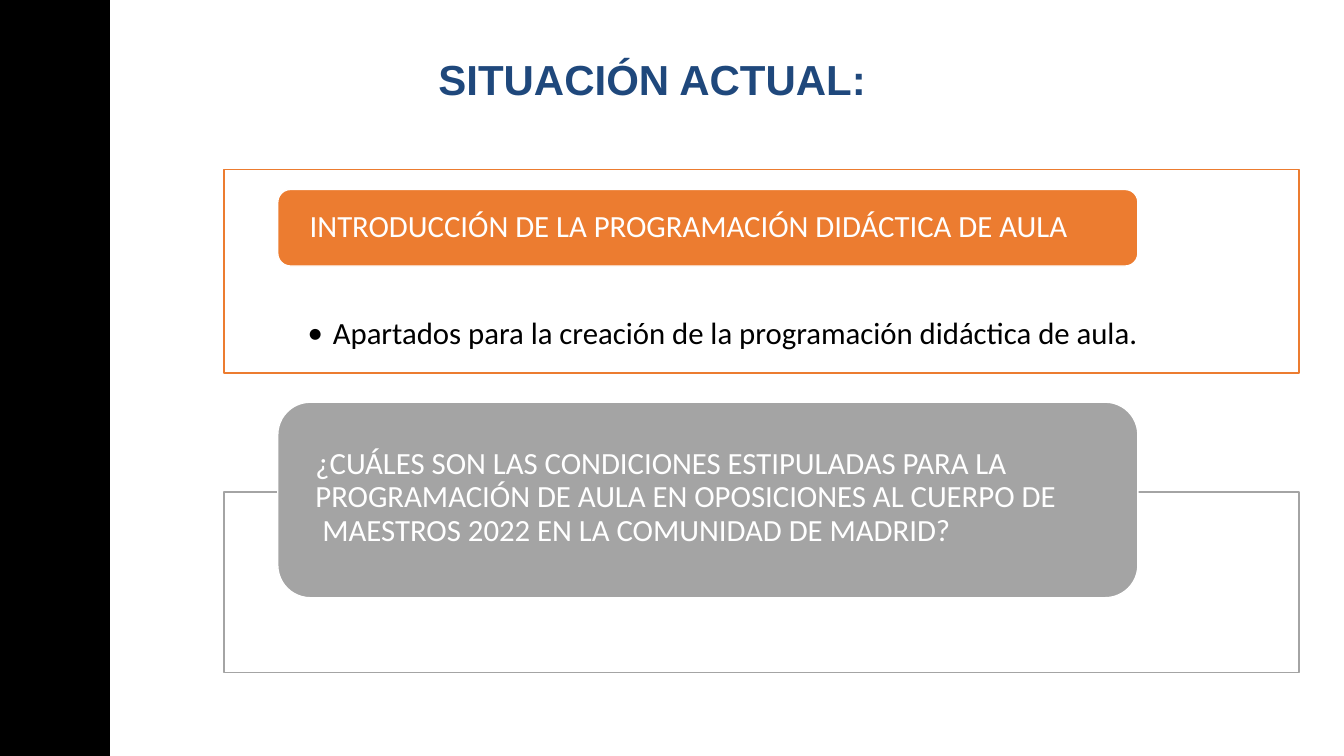
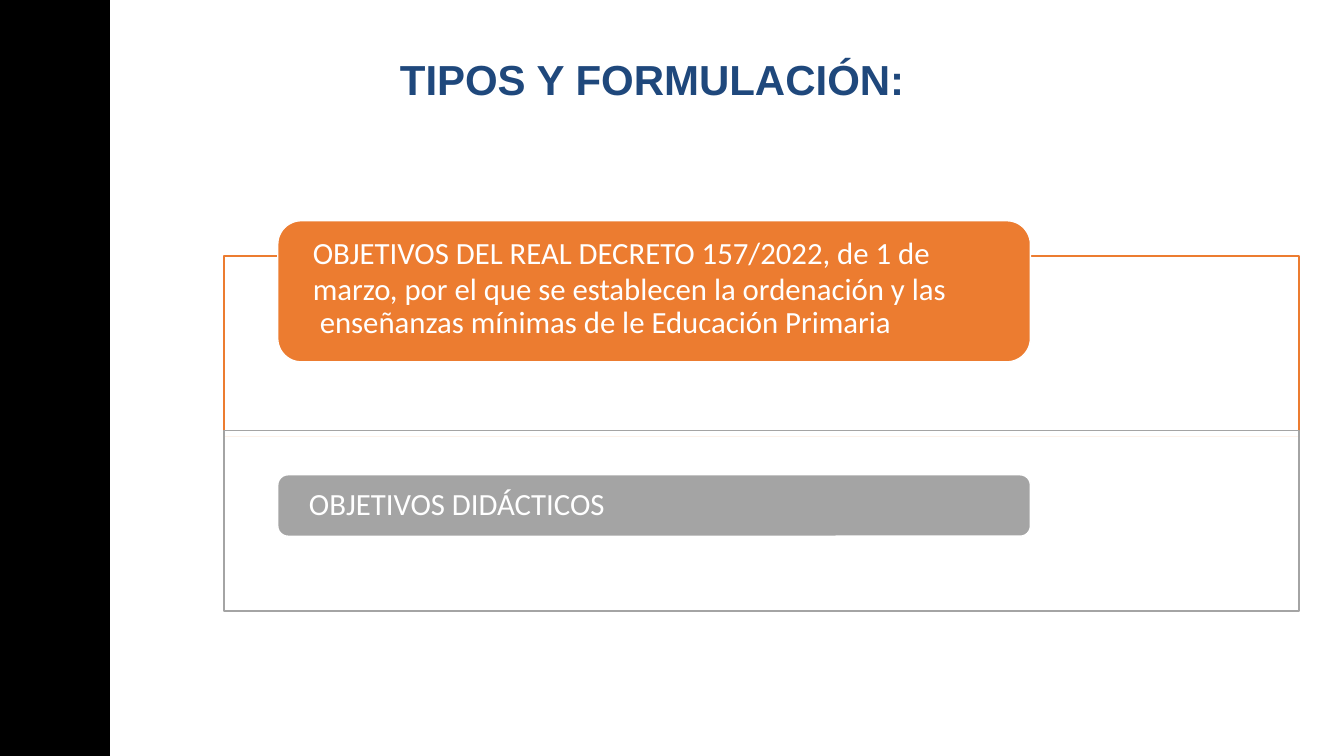
from lxml import etree
from pptx import Presentation
from pptx.dml.color import RGBColor
from pptx.enum import shapes, text
from pptx.oxml.ns import qn
from pptx.util import Inches, Pt

WIDE, HIGH = 13.33, 7.5
INK = {"band": "000000", "title": "1F487C", "orange": "EC7C30",
       "gray": "A4A4A4", "white": "FFFFFF", "text": "000000"}
LEFT, SPAN = WIDE / 6, WIDE * 0.8  # column shared by all frames


def paint(shape, fill=None, line=None, alpha=None):
    shape.shadow.inherit = False
    if fill:
        shape.fill.solid()
        shape.fill.fore_color.rgb = RGBColor.from_string(INK[fill])
        if alpha:
            tone = next(shape.element.spPr.iter(qn("a:srgbClr")))
            etree.SubElement(tone, qn("a:alpha")).set("val", str(alpha * 1000))
    else:
        shape.fill.background()
    if line:
        shape.line.color.rgb = RGBColor.from_string(INK[line])
        shape.line.width = Pt(1)
    else:
        shape.line.fill.background()


def write(shape, words, size=22, font="Calibri", color="white", bold=False,
          align="LEFT", pad=(0, 0, 0, 0), lead=None, gap=0, bullet=None):
    """Fill a shape with text; pad is left, top, right, bottom in inches."""
    frame = shape.text_frame
    frame.word_wrap = True
    frame.auto_size = text.MSO_AUTO_SIZE.NONE
    frame.vertical_anchor = text.MSO_ANCHOR.MIDDLE
    (frame.margin_left, frame.margin_top,
     frame.margin_right, frame.margin_bottom) = map(Inches, pad)
    frame.text = words
    for i, para in enumerate(frame.paragraphs):
        para.alignment = getattr(text.PP_ALIGN, align)
        para.space_before = Pt(gap if i else 0)
        if lead:
            para.line_spacing = Pt(lead)
        if bullet:
            props = next(shape.element.iter(qn("a:pPr")))
            props.set("marL", str(Inches(0.25)))
            props.set("indent", str(-Inches(0.25)))
            etree.SubElement(props, qn("a:buFont")).set("typeface", font)
            etree.SubElement(props, qn("a:buChar")).set("char", bullet)
        for run in para.runs:
            run.font.name, run.font.size, run.font.bold = font, Pt(size), bold
            run.font.color.rgb = RGBColor.from_string(INK[color])


def block(slide, kind, x, y, w, h):
    return slide.shapes.add_shape(getattr(shapes.MSO_SHAPE, kind),
                                  *map(Inches, (x, y, w, h)))


def panel(slide, top, high, tone, label, rise, tall, share,
          note=None, alpha=None):
    """Draw a frame and its label pill, set `rise` below the frame's top."""
    frame = block(slide, "RECTANGLE", LEFT, top, SPAN, high)
    paint(frame, fill="white" if alpha else None, line=tone, alpha=alpha)
    pill = block(slide, "ROUNDED_RECTANGLE", LEFT + SPAN * 0.05, top + rise,
                 SPAN * share, tall)
    paint(pill, fill=tone, line="white")
    many = "\v" in label or "\n" in label
    write(pill, label, pad=(0.28, 0, 0, 0.05),
          lead=23.8 if many else None, gap=1.6)
    if note:
        tail = slide.shapes.add_textbox(*map(Inches, (
            LEFT + 0.83, top + high - 0.6, SPAN * 0.85, 0.4)))
        write(tail, note, color="text", bullet="•")


def page(deck, title, panels):
    slide = deck.slides.add_slide(deck.slide_layouts[5])
    head = slide.shapes.title
    head.left, head.top, head.width, head.height = map(
        Inches, (3.47, 0.52, 6, 0.53))
    write(head, title, size=30, font="Arial", color="title", bold=True,
          align="CENTER")
    for part in panels:
        panel(slide, **part)
    return slide


def band(deck, slide):
    """Put the side band on the shared layout, behind everything."""
    bar = block(slide, "RECTANGLE", 0, 0, 1.08, HIGH)
    paint(bar, fill="band", line="band")
    bar.element.nvSpPr.cNvPr.id = 99
    layout = deck.slide_layouts[5]
    for spare in list(layout.placeholders)[1:]:
        layout.shapes.element.remove(spare.element)
    layout.shapes.element.insert(2, bar.element)


def main():
    deck = Presentation()
    deck.slide_width, deck.slide_height = Inches(WIDE), Inches(HIGH)
    first = page(deck, "SITUACIÓN ACTUAL:", [
        dict(top=1.68, high=2.02, tone="orange", rise=0.2, tall=0.76, share=0.8,
             label="INTRODUCCIÓN DE LA PROGRAMACIÓN DIDÁCTICA DE AULA",
             note="Apartados para la creación de la programación "
                  "didáctica de aula."),
        dict(top=4.88, high=1.79, tone="gray", rise=-0.89, tall=1.94, share=0.8,
             label="¿CUÁLES SON LAS CONDICIONES ESTIPULADAS PARA LA\v"
                   "PROGRAMACIÓN DE AULA EN OPOSICIONES AL CUERPO DE\v"
                   " MAESTROS 2022 EN LA COMUNIDAD DE MADRID?"),
    ])
    band(deck, first)
    page(deck, "TIPOS Y FORMULACIÓN:", [
        dict(top=2.54, high=1.79, tone="orange", rise=-0.35, tall=1.4, share=0.7,
             label="OBJETIVOS DEL REAL DECRETO 157/2022, de 1 de\n"
                   "marzo, por el que se establecen la ordenación y las\v"
                   " enseñanzas mínimas de le Educación Primaria"),
        dict(top=4.27, high=1.79, tone="gray", rise=0.44, tall=0.61, share=0.7,
             label="OBJETIVOS DIDÁCTICOS", alpha=90),
    ])
    deck.save("out.pptx")


if __name__ == "__main__":
    main()
